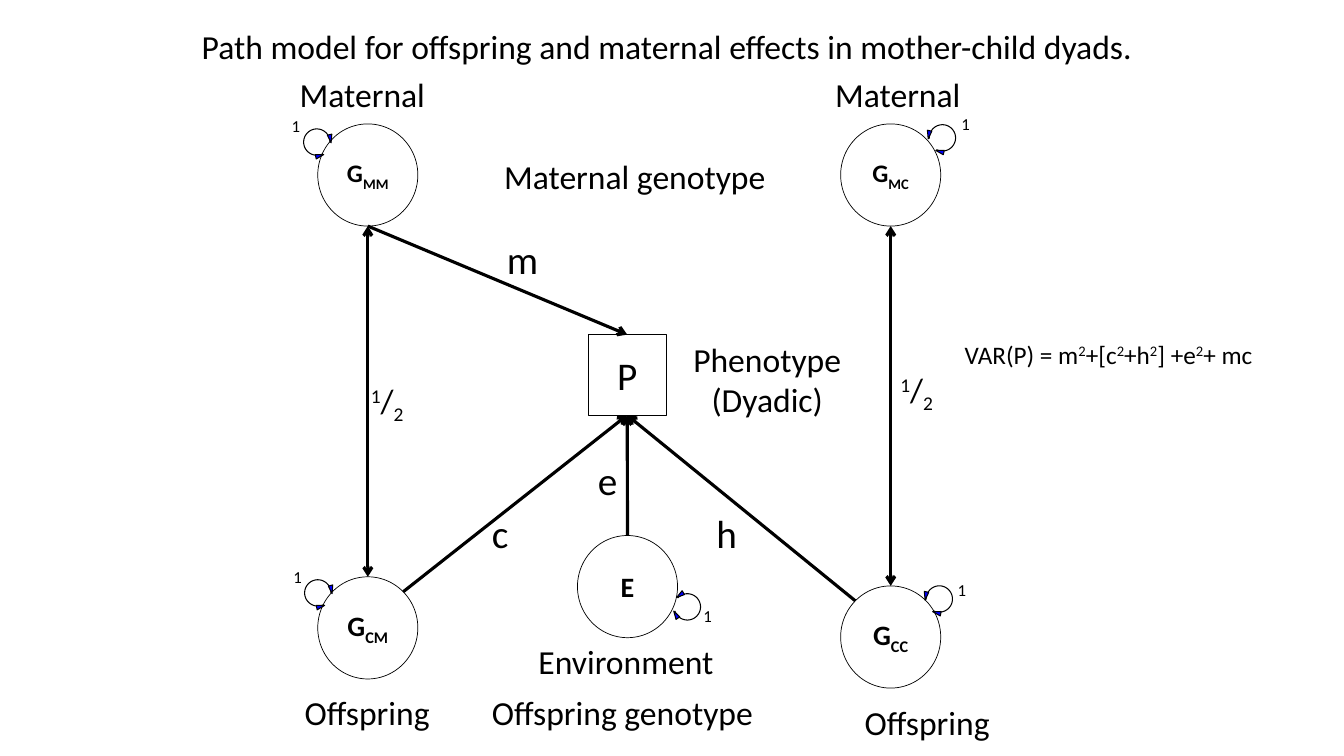
from math import cos, sin, radians
from lxml import etree
from pptx import Presentation
from pptx.dml.color import RGBColor
from pptx.enum.shapes import MSO_CONNECTOR as CONN, MSO_SHAPE as SHAPE
from pptx.enum.text import MSO_ANCHOR as ANCHOR, PP_ALIGN as ALIGN
from pptx.oxml.ns import qn
from pptx.util import Pt

BLACK = RGBColor(0, 0, 0)
WHITE = RGBColor(255, 255, 255)
BLUE = RGBColor(0, 0, 255)
FONT = "Calibri"
CIRCLE_W, CIRCLE_H = 71.5, 73
SUP, SUB = 30, -25
HALF = [("1", SUP), ("/", 0), ("2", SUB)]
VARIANCE = [("VAR(P) = m", 0), ("2", SUP), ("+[c", 0), ("2", SUP), ("+h", 0),
            ("2", SUP), ("] +e", 0), ("2", SUP), ("+ mc", 0)]


def write(tf, *lines, size=24, bold=False, align=ALIGN.LEFT):
    for i, line in enumerate(lines):
        p = tf.paragraphs[0] if i == 0 else tf.add_paragraph()
        p.alignment = align
        for text, base in [(line, 0)] if isinstance(line, str) else line:
            r = p.add_run()
            r.text = text
            r.font.name, r.font.size, r.font.bold = FONT, Pt(size), bold
            r.font.color.rgb = BLACK
            if base:
                r.font._element.set("baseline", str(base * 1000))


def label(s, x, y, w, h, *lines, wrap=False, **fmt):
    tf = s.shapes.add_textbox(Pt(x), Pt(y), Pt(w), Pt(h)).text_frame
    tf.word_wrap = wrap
    write(tf, *lines, **fmt)


def style(sp, fill=None, width=0.5):
    sp.shadow.inherit = False
    if fill is None:
        sp.fill.background()
    else:
        sp.fill.solid()
        sp.fill.fore_color.rgb = fill
    sp.line.color.rgb = BLACK
    sp.line.width = Pt(width)


def node(s, kind, x, y, w, h, text, fill=None, **fmt):
    sp = s.shapes.add_shape(kind, Pt(x), Pt(y), Pt(w), Pt(h))
    style(sp, fill)
    tf = sp.text_frame
    tf.vertical_anchor = ANCHOR.MIDDLE
    tf.word_wrap = False
    write(tf, text, align=ALIGN.CENTER, **fmt)


def outline(s, points, closed, fill=None):
    pts = [(Pt(x), Pt(y)) for x, y in points]
    fb = s.shapes.build_freeform(*pts[0])
    fb.add_line_segments(pts[1:], close=closed)
    style(fb.convert_to_shape(), fill, 0.75)


def variance_loop(s, cx, cy, gap, dx, dy):
    def polar(angle, radius):
        a = radians(gap + angle)
        return cx + radius * cos(a), cy + radius * sin(a)

    outline(s, [polar(a, 9.4) for a in range(30, 331, 6)], False)
    for side in (-1, 1):
        head = [(29, 10.2), (60, 12.1), (65, 9)]
        outline(s, [polar(side * a, radius) for a, radius in head], True, BLUE)
    label(s, cx + dx, cy + dy, 21, 21.6, "1", size=12)


def latent(s, x, y, text, size, loop, one, gap, caption, place):
    node(s, SHAPE.OVAL, x, y, CIRCLE_W, CIRCLE_H, text, size=size, bold=True)
    variance_loop(s, x + loop[0], y + loop[1], gap, *one)
    dx, dy, w = place
    label(s, x + dx, y + dy, w, 36, caption)


def rim(box, angle):
    a = radians(angle)
    return (box[0] + CIRCLE_W / 2 * (1 + cos(a)),
            box[1] + CIRCLE_H / 2 * (1 + sin(a)))


def arrow(s, start, end, both=False):
    c = s.shapes.add_connector(CONN.STRAIGHT, *map(Pt, start + end))
    c.line.color.rgb = BLACK
    c.line.width = Pt(2.25)
    ln = c.line._get_or_add_ln()
    for tag in ("a:headEnd", "a:tailEnd") if both else ("a:tailEnd",):
        etree.SubElement(ln, qn(tag)).set("type", "arrow")
    etree.SubElement(c._element.spPr, qn("a:effectLst"))


def phenotype(s, x, y, w, h):
    node(s, SHAPE.RECTANGLE, x, y, w, h, "P", fill=WHITE, size=28)
    label(s, x + 67.5, y - 0.7, 121, 65.5, "Phenotype", "(Dyadic)",
          align=ALIGN.CENTER)
    return (x + w / 2, y), (x + w / 2, y + h)


def path_model(s, x, y):
    mm, mc = (x, y), (x + 373.5, y)
    cm, cc = (x, y + 323.5), (x + 373.5, y + 330)
    env = (x + 185.5, y + 294)
    for box, sub, size, loop, one, gap, caption, place in [
        (mm, "MM", 18, (-0.7, 13), (-25, -22.5), 32, "Maternal", (-20, -39, 105)),
        (mc, "MC", 18, (72.7, 10), (6.5, -21), 147, "Maternal", (-11, -39, 105)),
        (cm, "CM", 20, (0, 11.5), (-24.5, -22.5), 32, "Offspring", (-16.5, 79, 105)),
        (cc, "CC", 20, (70.5, 9.4), (6, -17.5), 147, "Offspring", (10, 79, 105)),
    ]:
        latent(s, *box, [("G", 0), (sub, SUB)], size, loop, one, gap, caption, place)
    latent(s, *env, "E", 20, (78.5, 51), (4.3, -4.3), 192, "Environment",
           (-35, 72, 142))

    top, bottom = phenotype(s, x + 193, y + 150.5, 56, 57.6)
    arrow(s, rim(mm, 90), rim(cm, -90), both=True)
    arrow(s, rim(mc, 90), rim(cc, -90), both=True)
    arrow(s, rim(mm, 90), top)
    for start in (rim(cm, -45), rim(env, -90), rim(cc, -135)):
        arrow(s, start, bottom)

    for dx, dy, w, text, size in [
        (128, 76.4, 26, "m", 28),
        (117.2, 271.5, 52, "c", 28),
        (193, 234, 52, "e", 28),
        (277.7, 271.5, 69, "h", 28),
        (30.8, 179.3, 44, HALF, 24),
        (409, 171.4, 44, HALF, 24),
    ]:
        label(s, x + dx, y + dy, w, 41, text, wrap=True, size=size)
    label(s, x + 126, y + 19.5, 204, 36, "Maternal genotype")
    label(s, x + 117.2, y + 402.5, 204, 36, "Offspring genotype")
    label(s, x + 455, y + 150, 226, 29, VARIANCE, size=18)


def main():
    prs = Presentation()
    prs.slide_width, prs.slide_height = Pt(960), Pt(540)
    s = prs.slides.add_slide(prs.slide_layouts[6])
    label(s, 137, 15, 703.5, 36,
          "Path model for offspring and maternal effects in mother-child dyads.",
          wrap=True)
    path_model(s, 227, 88.5)
    prs.save("out.pptx")


if __name__ == "__main__":
    main()
